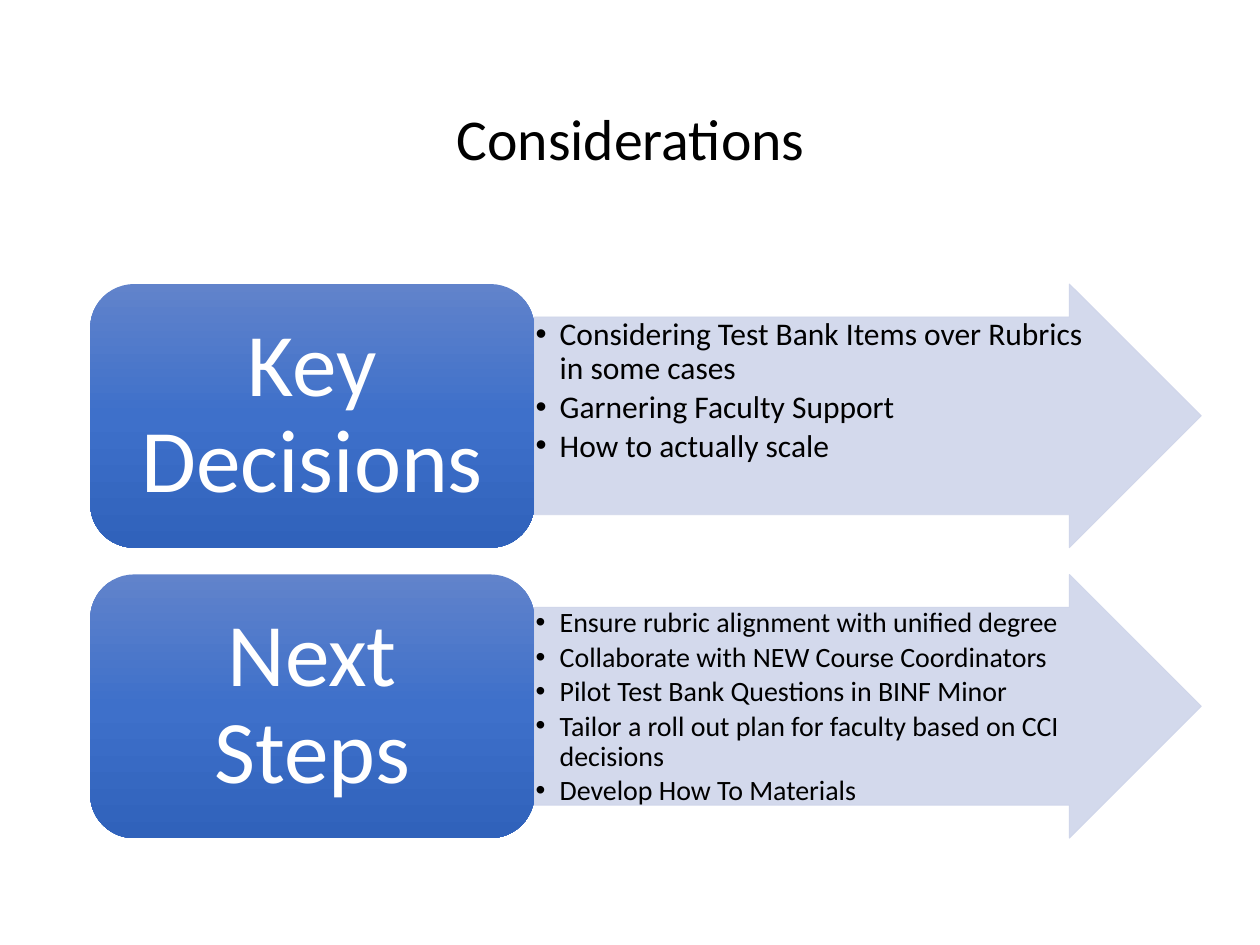
from collections import namedtuple
from copy import deepcopy

from lxml.etree import SubElement
from pptx import Presentation
from pptx.dml.color import RGBColor
from pptx.enum.shapes import MSO_SHAPE
from pptx.enum.text import MSO_ANCHOR, MSO_AUTO_SIZE, PP_ALIGN
from pptx.oxml.ns import qn
from pptx.util import Inches, Pt

Theme = namedtuple("Theme", "font ink light pale blues title label")
theme = Theme("Calibri", "000000", "FFFFFF", "CFD5EA",
              ("6183CB", "3E70CA", "3062BB"), 33, 51)

deck = Presentation()
deck.slide_width, deck.slide_height = Inches(10), Inches(7.5)
col, row = deck.slide_width / 100, deck.slide_height / 100
slide = deck.slides.add_slide(deck.slide_layouts[3])
shapes = slide.shapes
title, *lists = slide.placeholders


def area(left, top, wide, high):
    return [int(n) for n in (left * col, top * row, wide * col, high * row)]


def write(para, text, size, color):
    para.line_spacing = 0.9
    para.space_before = Pt(0)
    run = para.add_run()
    run.text = text
    run.font.name = theme.font
    run.font.size = Pt(size)
    run.font.color.rgb = RGBColor.from_string(color)


title.left, title.top, title.width, title.height = area(17.6, 6.3, 64.9, 17.4)
title.text_frame.vertical_anchor = MSO_ANCHOR.MIDDLE
title.text_frame.auto_size = MSO_AUTO_SIZE.NONE
title.text_frame.paragraphs[0].alignment = PP_ALIGN.CENTER
write(title.text_frame.paragraphs[0], "Considerations", theme.title, theme.ink)

bands = [
    ("Key Decisions", 18, [
        "Considering Test Bank Items over Rubrics in some cases",
        "Garnering Faculty Support",
        "How to actually scale",
    ]),
    ("Next Steps", 16, [
        "Ensure rubric alignment with unified degree",
        "Collaborate with NEW Course Coordinators",
        "Pilot Test Bank Questions in BINF Minor",
        "Tailor a roll out plan for faculty based on CCI decisions",
        "Develop How To Materials",
    ]),
]
first, pitch, high = 30.06, 30.73, 27.9
edge, split, label, reach = 7.16, 42.42, 35.26, 52.92

for i, ((name, size, items), body) in enumerate(zip(bands, lists)):
    top = first + i * pitch

    arrow = shapes.add_shape(MSO_SHAPE.RIGHT_ARROW, *area(split, top, reach, high))
    arrow.adjustments[0], arrow.adjustments[1] = 0.75, 0.5
    arrow.shadow.inherit = False
    arrow.fill.solid()
    arrow.fill.fore_color.rgb = RGBColor.from_string(theme.pale)
    arrow.line.color.rgb = RGBColor.from_string(theme.pale)
    arrow.line.width = Pt(0.5)
    for tint in arrow._element.spPr.iter(qn("a:srgbClr")):
        SubElement(tint, qn("a:alpha"), val="90000")

    body.left, body.top, body.width, body.height = area(
        split, top + high / 8, 45, high * 0.75)
    shapes._spTree.append(body._element)
    frame = body.text_frame
    frame.word_wrap = True
    frame.auto_size = MSO_AUTO_SIZE.NONE
    frame.vertical_anchor = MSO_ANCHOR.TOP
    frame.margin_left = frame.margin_right = Inches(0.01)
    frame.margin_top = frame.margin_bottom = Inches(0.01)
    for j, item in enumerate(items):
        para = frame.add_paragraph() if j else frame.paragraphs[0]
        para.level = 1
        props = para._p.get_or_add_pPr()
        props.set("marL", str(Inches(0.19)))
        props.set("indent", str(-Inches(0.19)))
        SubElement(props, qn("a:buFont"), typeface="Arial")
        SubElement(props, qn("a:buChar"), char="•")
        para.space_after = Pt(size * 0.15)
        write(para, item, size, theme.ink)

    box = shapes.add_shape(MSO_SHAPE.ROUNDED_RECTANGLE, *area(edge, top, label, high))
    box.shadow.inherit = False
    box.line.fill.background()
    box.fill.gradient()
    box.fill.gradient_angle = 270
    stops = box._element.spPr.find(".//" + qn("a:gsLst"))
    stops.append(deepcopy(stops[0]))
    for k, (stop, shade) in enumerate(zip(box.fill.gradient_stops, theme.blues)):
        stop.position = k / 2
        stop.color.rgb = RGBColor.from_string(shade)
    frame = box.text_frame
    frame.word_wrap = True
    frame.vertical_anchor = MSO_ANCHOR.MIDDLE
    frame.margin_left = frame.margin_right = Inches(0.2)
    frame.margin_top = frame.margin_bottom = Inches(0.1)
    frame.paragraphs[0].alignment = PP_ALIGN.CENTER
    write(frame.paragraphs[0], name, theme.label, theme.light)

deck.save("out.pptx")
